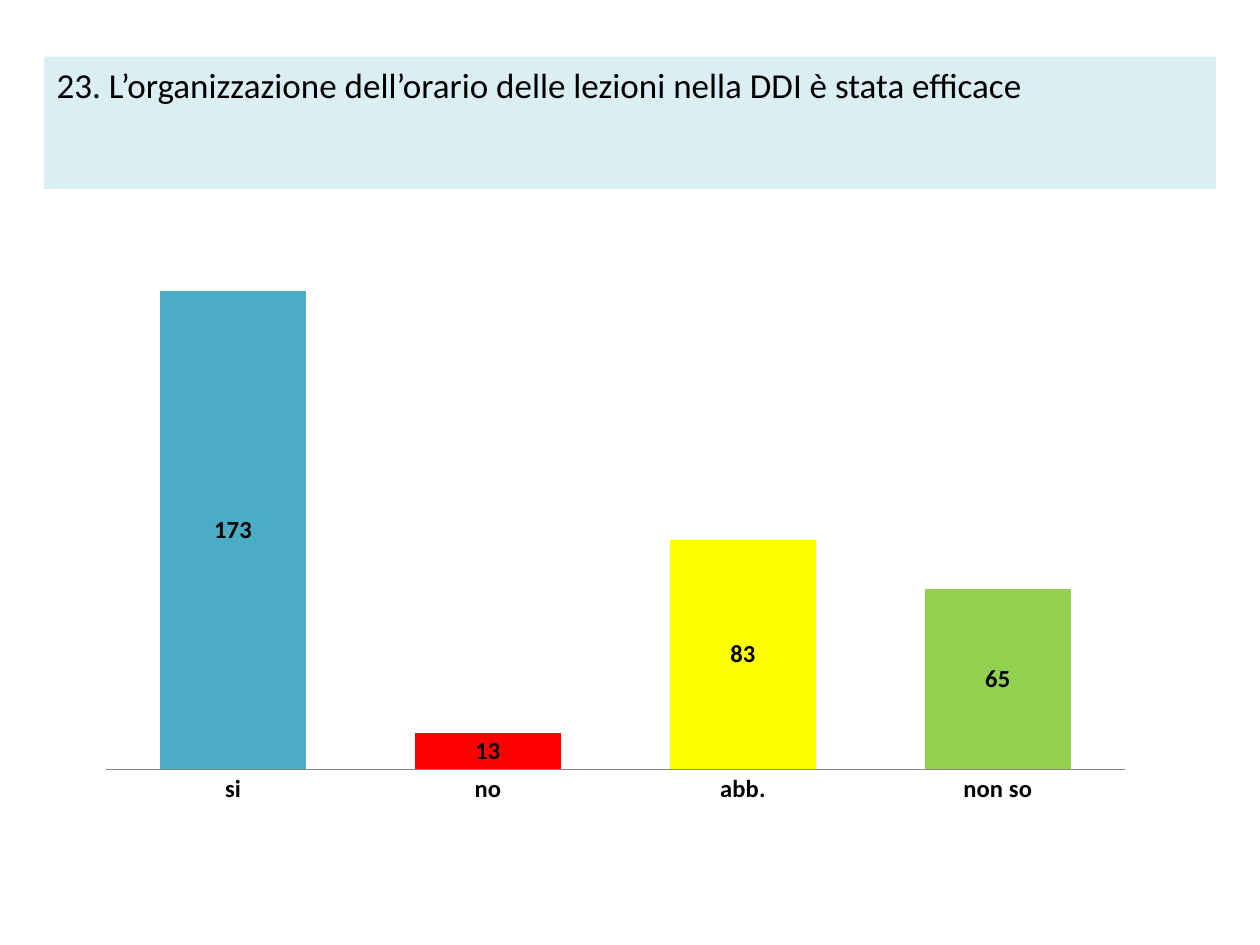
import pptx
import pptx.util
import pptx.chart.data
import pptx.dml.color
import pptx.enum.chart
import pptx.enum.text
import pptx.oxml

SLIDE_W, SLIDE_H = 10, 7.5
QUESTION = "23. L’organizzazione dell’orario delle lezioni nella DDI è stata efficace"
ANSWERS = {
    "si": (173, "4BACC6"),
    "no": (13, "FF0000"),
    "abb.": (83, "FFFF00"),
    "non so": (65, "92D050"),
}


def color(value):
    """Turn a hex string into a colour."""
    return pptx.dml.color.RGBColor.from_string(value)


def share_box(left, top, width, height):
    """Turn shares of the slide's size into lengths."""
    return [pptx.util.Inches(share * side) for share, side in
            zip((left, top, width, height), (SLIDE_W, SLIDE_H) * 2)]


def style_font(font, size, bold=False):
    """Set the common typeface in black."""
    font.name = "Calibri"
    font.size = pptx.util.Pt(size)
    font.bold = bold
    font.color.rgb = color("000000")


def place_question(slide, box):
    """Place the question in its pale band."""
    band = slide.shapes.title
    band.left, band.top, band.width, band.height = box
    band.fill.solid()
    band.fill.fore_color.rgb = color("DBEEF4")
    frame = band.text_frame
    frame.word_wrap = True
    frame.auto_size = pptx.enum.text.MSO_AUTO_SIZE.NONE
    frame.vertical_anchor = pptx.enum.text.MSO_ANCHOR.TOP
    paragraph = frame.paragraphs[0]
    paragraph.alignment = pptx.enum.text.PP_ALIGN.LEFT
    run = paragraph.add_run()
    run.text = QUESTION
    style_font(run.font, 20)


def fix_plot_area(chart, x, y, width, height):
    """Fix the inner plot area as shares of the chart."""
    plot_area = chart.plots[0]._element.getparent()
    for old in plot_area.findall(pptx.oxml.ns.qn("c:layout")):
        plot_area.remove(old)
    sizes = "".join(f'<c:{tag} val="{share}"/>' for tag, share in
                    zip("xywh", (x, y, width, height)))
    plot_area.insert(0, pptx.oxml.parse_xml(
        f'<c:layout {pptx.oxml.ns.nsdecls("c")}><c:manualLayout>'
        '<c:layoutTarget val="inner"/><c:xMode val="edge"/><c:yMode val="edge"/>'
        f'{sizes}</c:manualLayout></c:layout>'))


def place_answers(slide, box):
    """Place the column chart of the answers."""
    data = pptx.chart.data.CategoryChartData()
    data.categories = list(ANSWERS)
    data.add_series("Series 1", [count for count, _ in ANSWERS.values()])
    chart = slide.shapes.add_chart(
        pptx.enum.chart.XL_CHART_TYPE.COLUMN_STACKED, *box, data).chart
    chart.has_title = False
    chart.has_legend = False
    style_font(chart.font, 10)
    fix_plot_area(chart, 0.02, 0.02, 0.96, 0.9)

    counts = chart.value_axis
    counts.minimum_scale, counts.maximum_scale = 0, 200
    counts.has_major_gridlines = False
    counts.visible = False
    answers = chart.category_axis
    answers.major_tick_mark = pptx.enum.chart.XL_TICK_MARK.NONE
    answers.format.line.color.rgb = color("868686")
    style_font(answers.tick_labels.font, 14, bold=True)

    columns = chart.plots[0]
    columns.gap_width, columns.overlap = 75, 100
    columns.vary_by_categories = False
    series = columns.series[0]
    for index, (_, fill) in enumerate(ANSWERS.values()):
        point_fill = series.points[index].format.fill
        point_fill.solid()
        point_fill.fore_color.rgb = color(fill)
    labels = series.data_labels
    labels.show_value = True
    labels.position = pptx.enum.chart.XL_LABEL_POSITION.CENTER
    style_font(labels.font, 14, bold=True)


def main():
    """Build and save the slide."""
    deck = pptx.Presentation()
    deck.slide_width = pptx.util.Inches(SLIDE_W)
    deck.slide_height = pptx.util.Inches(SLIDE_H)
    slide = deck.slides.add_slide(deck.slide_layouts[5])
    place_question(slide, share_box(0.035, 0.06, 0.93, 0.14))
    place_answers(slide, share_box(0.067, 0.216, 0.843, 0.65))
    deck.save("out.pptx")


if __name__ == "__main__":
    main()
